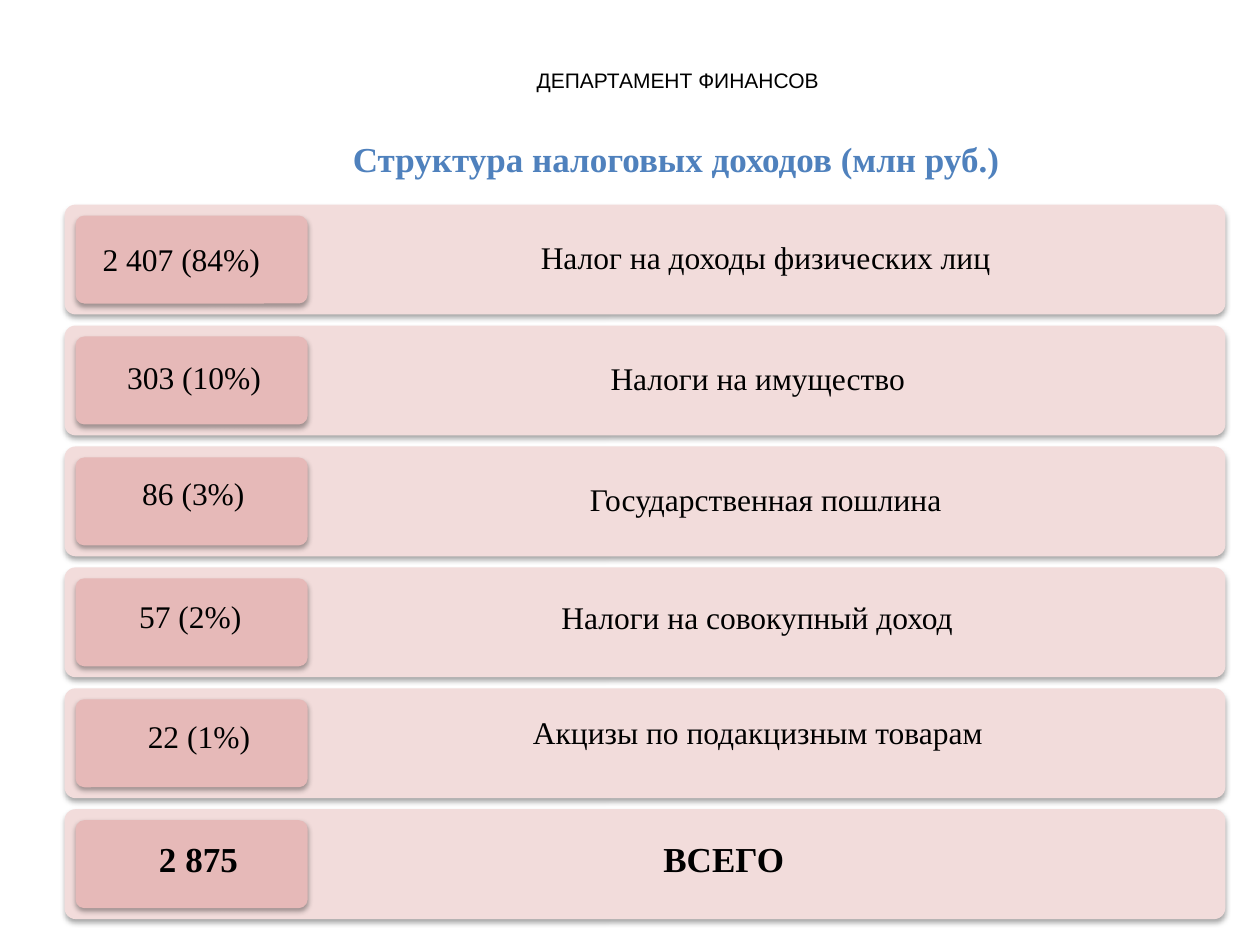
import pptx
import pptx.dml.color
import pptx.enum.shapes
import pptx.enum.text
import pptx.oxml
import pptx.oxml.ns
import pptx.util

Pt = pptx.util.Pt
CENTER = pptx.enum.text.PP_ALIGN.CENTER
LEFT = pptx.enum.text.PP_ALIGN.LEFT
MIDDLE = pptx.enum.text.MSO_ANCHOR.MIDDLE
TOP = pptx.enum.text.MSO_ANCHOR.TOP


def color(value):
    return pptx.dml.color.RGBColor.from_string(value)


class Deck:
    """Style and current slide, with a method for each kind of element."""

    serif, sans = "Times New Roman", "Arial"
    ink, accent, bar_fill, tile_fill = "000000", "4F81BD", "F2DCDB", "E6B9B8"

    def __init__(self, prs):
        self.s = prs.slides.add_slide(prs.slide_layouts[5])

    def set_text(self, tf, text, size=18, font=serif, ink=ink, bold=False, align=CENTER):
        p = tf.paragraphs[0]
        p.text = text
        p.alignment = align
        p.font.name, p.font.size, p.font.bold = font, Pt(size), bold
        p.font.color.rgb = color(ink)
        return p

    def title(self, text, left, top, width, height):
        sp = self.s.shapes.title
        sp.left, sp.top, sp.width, sp.height = Pt(left), Pt(top), Pt(width), Pt(height)
        sp.text_frame.vertical_anchor = TOP
        self.set_text(sp.text_frame, text, 20, ink=self.accent, bold=True, align=LEFT)

    def text(self, text, left, top, width, height=28.8, **style):
        tf = self.s.shapes.add_textbox(Pt(left), Pt(top), Pt(width), Pt(height)).text_frame
        tf.word_wrap = False
        self.set_text(tf, text, **style)

    def panel(self, left, top, width, height, fill):
        sp = self.s.shapes.add_shape(
            pptx.enum.shapes.MSO_SHAPE.ROUNDED_RECTANGLE, Pt(left), Pt(top), Pt(width), Pt(height))
        sp.adjustments[0] = 0.1
        sp.fill.solid()
        sp.fill.fore_color.rgb = color(fill)
        sp.line.fill.background()
        sp.shadow.inherit = False
        effects = sp._element.spPr.find(pptx.oxml.ns.qn("a:effectLst"))
        effects.append(pptx.oxml.parse_xml(
            f'<a:outerShdw {pptx.oxml.ns.nsdecls("a")} blurRad="{Pt(3.1)}" dist="{Pt(1.8)}" '
            'dir="5400000" rotWithShape="0"><a:srgbClr val="000000">'
            '<a:alpha val="35000"/></a:srgbClr></a:outerShdw>'))
        return sp

    def row(self, top, label=None, right_inset=6):
        sp = self.panel(36.9, top, 663.3, 62.8, self.bar_fill)
        self.panel(43.2, top + 6.3, 132.6, 50.3, self.tile_fill)
        if label:
            tf = sp.text_frame
            tf.word_wrap, tf.vertical_anchor = True, MIDDLE
            tf.margin_left, tf.margin_right = Pt(144), Pt(right_inset)
            tf.margin_top = tf.margin_bottom = Pt(5)
            self.set_text(tf, label).line_spacing = 0.9


def main():
    prs = pptx.Presentation()
    prs.slide_width, prs.slide_height = Pt(720), Pt(540)
    d = Deck(prs)
    d.text("ДЕПАРТАМЕНТ ФИНАНСОВ", 64, 35.3, 646.6, 21.6, size=12, font=d.sans)
    d.title("Структура налоговых доходов (млн руб.)", 194.4, 74.9, 484.6, 31.7)

    rows = [("Налог на доходы физических лиц", 6), ("Налоги на имущество", 15),
            ("Государственная пошлина", 6), (None, 0), (None, 0), (None, 0)]
    for i, (label, inset) in enumerate(rows):
        d.row(116.9 + 69.1 * i, label, inset)

    for text, left, top, width in [
        ("2 407 (84%)", 51.1, 133.9, 105.1),
        ("303 (10%)", 65.5, 200.9, 90.7),
        ("86 (3%)", 73.8, 267.1, 73.4),
        ("57 (2%)", 72, 337.7, 73.4),
        ("22 (1%)", 77, 406.1, 73.4),
        ("Налоги на совокупный доход", 312.5, 338.4, 240.5),
        ("Акцизы по подакцизным товарам", 295.9, 403.9, 274.3),
    ]:
        d.text(text, left, top, width)
    for text, left, width in [("2 875", 83.5, 59.8), ("ВСЕГО", 371.5, 84.2)]:
        d.text(text, left, 475.2, width, 31.7, size=20, bold=True)
    prs.save("out.pptx")


if __name__ == "__main__":
    main()
